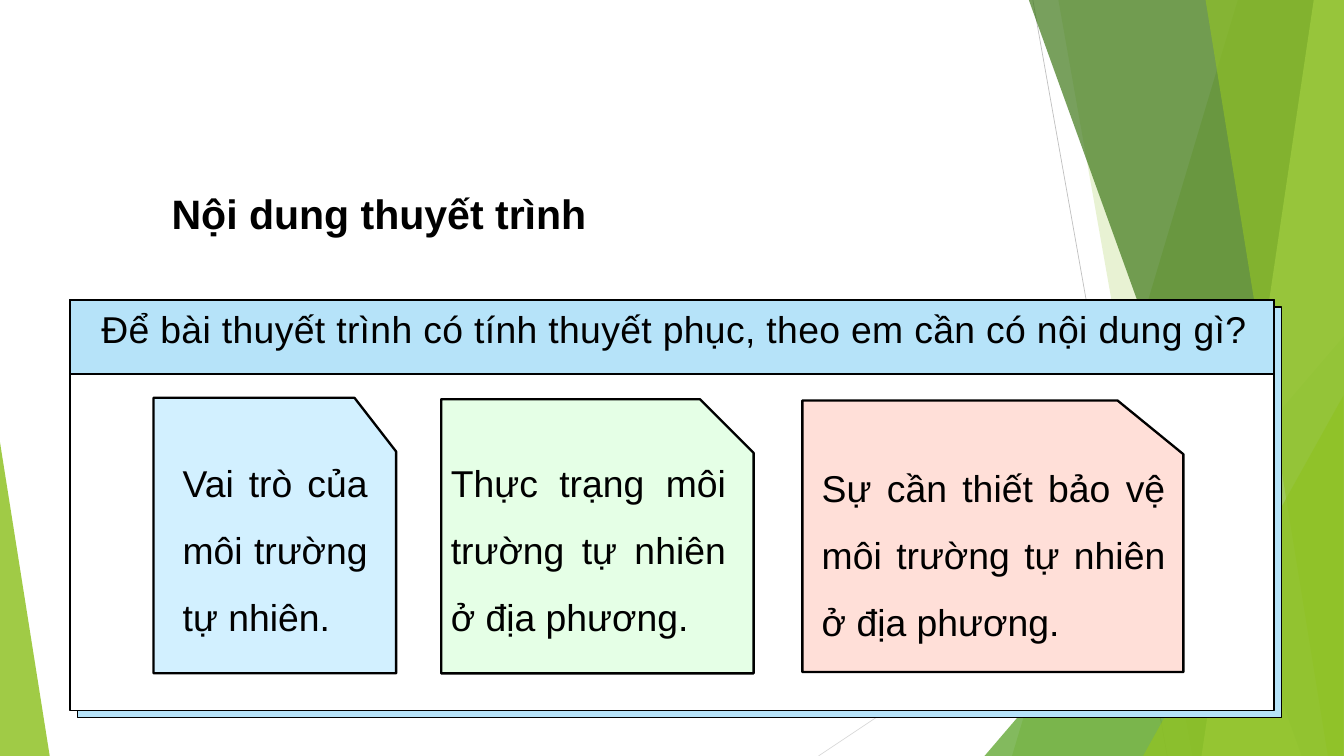
from lxml.etree import SubElement
from pptx import Presentation
from pptx.dml.color import RGBColor
from pptx.enum.shapes import MSO_CONNECTOR as Link, MSO_SHAPE as Preset
from pptx.enum.text import MSO_ANCHOR as Anchor, MSO_AUTO_SIZE as Fit, PP_ALIGN as Align
from pptx.oxml.ns import qn
from pptx.util import Inches, Pt

COLUMNS, ROWS = 200, 112.5
FONT = "Arial"
BLACK = "000000"

RAYS = [
    ((153.7, 0), (173.7, ROWS), "BFBFBF"),
    ((199.9, 60.4), (121.8, ROWS), "D9D9D9"),
]
BACK_FACETS = [
    (184.2, 150.6, "90C226", 30),
    (157.5, 177.4, "90C226", 20),
]
FRONT_FACETS = [
    (153.1, 193.7, "3F7819", 70),
    (195.5, 178.8, "C0E474", 70),
    (179.4, 197.6, "90C226", 65),
]
CARDS = [
    ((22.85, 59.2, 36.1, 41), 6.2, "D2F0FF", (26.2, 64.6, 29.5, 30.1),
     "Vai trò của môi trường tự nhiên."),
    ((65.65, 59.4, 46.5, 40.8), 8, "E5FFE6", (66.1, 64.6, 42.9, 31.3),
     "Thực trạng môi trường tự nhiên ở địa phương."),
    ((119.4, 59.6, 56.7, 40.4), 9.8, "FFDFD8", (121.3, 65.4, 53.1, 31.3),
     "Sự cần thiết bảo vệ môi trường tự nhiên ở địa phương."),
]


def cells(*counts):
    return [Inches(count / 10) for count in counts]


def color(code):
    return RGBColor.from_string(code)


def paint(shape, fill, opacity=100, line=0):
    shape.shadow.inherit = False
    shape.fill.solid()
    shape.fill.fore_color.rgb = color(fill)
    if opacity < 100:
        tint = shape.fill._xPr.find(qn("a:solidFill"))[0]
        SubElement(tint, qn("a:alpha"), val=str(opacity * 1000))
    if line:
        shape.line.color.rgb = color(BLACK)
        shape.line.width = Pt(line)
    else:
        shape.line.fill.background()


def add_ray(page, start, end, shade):
    ray = page.shapes.add_connector(Link.STRAIGHT, *cells(*start, *end))
    ray.line.color.rgb = color(shade)
    ray.line.width = Pt(0.75)
    SubElement(ray._element.spPr, qn("a:effectLst"))


def add_polygon(page, points, fill, opacity=100, line=0):
    first, *rest = [cells(*point) for point in points]
    builder = page.shapes.build_freeform(*first, scale=1.0)
    builder.add_line_segments(rest, close=True)
    paint(builder.convert_to_shape(), fill, opacity, line)


def add_facet(page, top, bottom, fill, opacity):
    corners = [(top, 0), (COLUMNS, 0), (COLUMNS, ROWS), (bottom, ROWS)]
    add_polygon(page, corners, fill, opacity)


def add_triangle(page, area, apex, fill, opacity):
    triangle = page.shapes.add_shape(Preset.ISOSCELES_TRIANGLE, *cells(*area))
    triangle.adjustments[0] = apex
    paint(triangle, fill, opacity)


def add_panel(page, area, fill, line):
    panel = page.shapes.add_shape(Preset.RECTANGLE, *cells(*area))
    paint(panel, fill, line=line)


def write(box, text, size, align, spacing, bold=False, inset=True, tracking=0):
    frame = box.text_frame
    frame.word_wrap = True
    frame.auto_size = Fit.NONE
    frame.vertical_anchor = Anchor.TOP
    if not inset:
        frame.margin_left = frame.margin_right = 0
        frame.margin_top = frame.margin_bottom = 0
    para = frame.paragraphs[0]
    para.alignment = align
    para.line_spacing = spacing
    span = para.add_run()
    span.text = text
    span.font.name = FONT
    span.font.size = Pt(size)
    span.font.bold = bold
    span.font.color.rgb = color(BLACK)
    if tracking:
        span.font._element.set("spc", str(tracking))


def add_title(page, area, text):
    title = page.shapes.title
    title.left, title.top, title.width, title.height = cells(*area)
    write(title, text, 44, Align.CENTER, Pt(52.8), bold=True, inset=False)


def add_card(page, area, cut, fill, text_area, text):
    left, top, width, height = area
    right, bottom = left + width, top + height
    outline = [(left, top), (right - cut, top), (right, top + 8),
               (right, bottom), (left, bottom)]
    add_polygon(page, outline, fill, line=2.5)
    box = page.shapes.add_textbox(*cells(*text_area))
    write(box, text, 40, Align.JUSTIFY, 1.5)


def add_backdrop(page):
    for ray in RAYS:
        add_ray(page, *ray)
    for facet in BACK_FACETS:
        add_facet(page, *facet)
    add_triangle(page, (146.5, 50, 53.5, 62.5), 1, "54A021", 72)
    for facet in FRONT_FACETS:
        add_facet(page, *facet)
    add_triangle(page, (170.1, 58.9, 29.8, 53.6), 1, "90C226", 80)
    add_triangle(page, (0, 65.8, 7.4, 46.7), 0, "90C226", 85)


def add_question(page, text):
    left, top, width, height, offset = 10.4, 44.6, 179.2, 61.1, 1.1
    add_panel(page, (left + offset, top + offset, width, height), "B6E3F9", 1.5)
    add_panel(page, (left, top, width, height), "FFFFFF", 1.5)
    add_panel(page, (left, top, width, 11), "B6E3F9", 2.25)
    box = page.shapes.add_textbox(*cells(11.7, 48.9, 174, 3.4))
    write(box, text, 40, Align.RIGHT, Pt(24.2), inset=False, tracking=40)


def main():
    deck = Presentation()
    deck.slide_width, deck.slide_height = cells(COLUMNS, ROWS)
    page = deck.slides.add_slide(deck.slide_layouts[5])
    add_backdrop(page)
    add_title(page, (17.2, 28, 78.5, 7), "Nội dung thuyết trình")
    add_question(page, "Để bài thuyết trình có tính thuyết phục, theo em cần có nội dung gì?")
    for card in CARDS:
        add_card(page, *card)
    deck.save("out.pptx")


if __name__ == "__main__":
    main()
